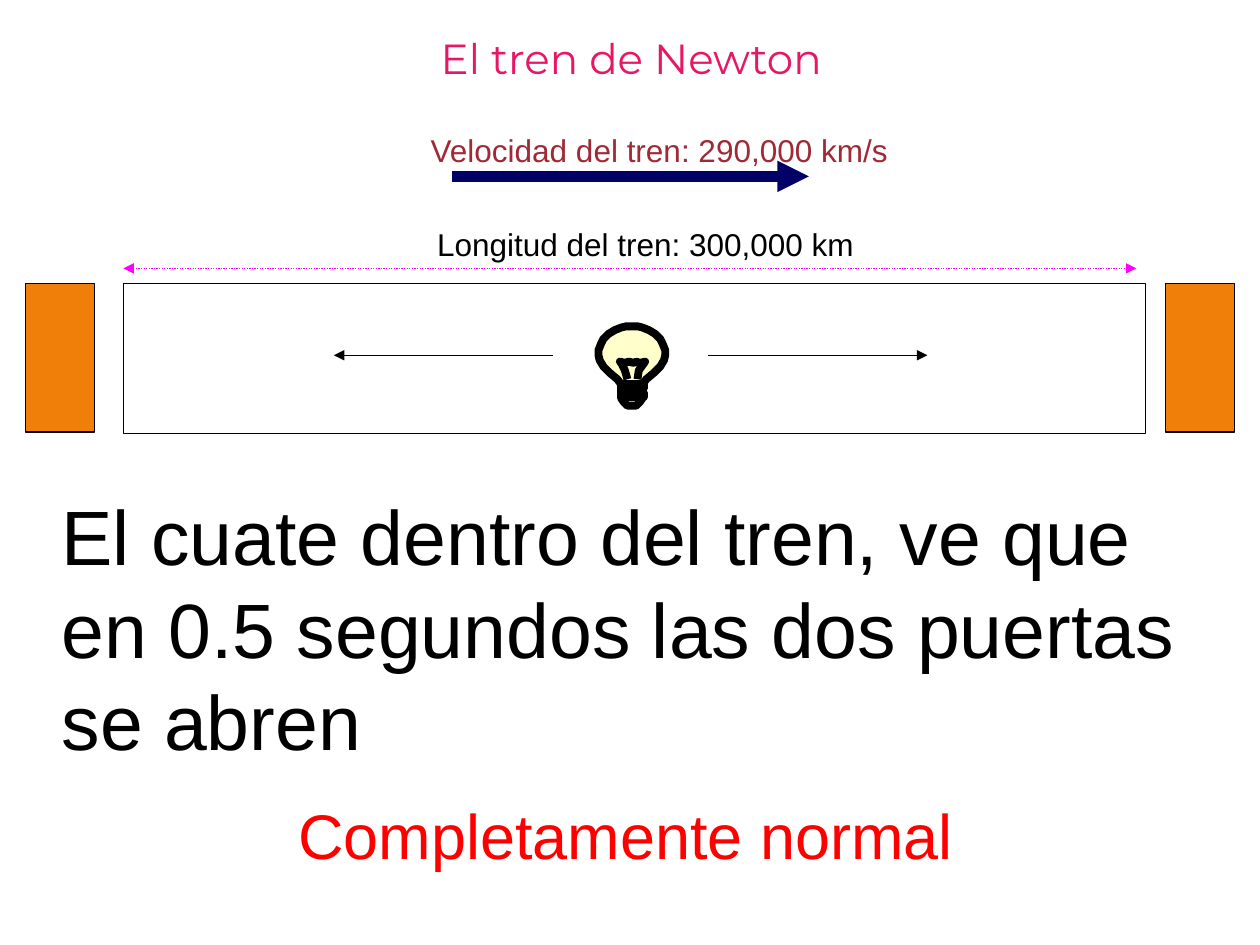
from lxml.etree import SubElement
from pptx import Presentation
from pptx.dml.color import RGBColor
from pptx.enum.dml import MSO_LINE
from pptx.enum.shapes import MSO_CONNECTOR, MSO_SHAPE
from pptx.enum.text import MSO_AUTO_SIZE, PP_ALIGN
from pptx.oxml.ns import qn
from pptx.util import Pt

COLORS = {
    "black": "000000", "navy": "000066", "magenta": "FF00FF",
    "orange": "F07F09", "bulb": "FFFFCC", "title": "E81766",
    "speed": "9F2936", "red": "FF0000",
}


def rgb(name):
    return RGBColor.from_string(COLORS[name])


def style(s, fill, width):
    s.shadow.inherit = False
    if fill:
        s.fill.solid()
        s.fill.fore_color.rgb = rgb(fill)
    else:
        s.fill.background()
    s.line.color.rgb = rgb("black")
    s.line.width = Pt(width)


prs = Presentation()
prs.slide_width, prs.slide_height = Pt(720), Pt(540)
slide = prs.slides.add_slide(prs.slide_layouts[6])
shapes = slide.shapes

# Train and the two doors
for x, y, w, h, fill in [
    (70.56, 162, 583.92, 85.68, None),
    (14.4, 162, 39.6, 84.96, "orange"),
    (666, 162, 39.6, 84.96, "orange"),
]:
    s = shapes.add_shape(MSO_SHAPE.RECTANGLE, Pt(x), Pt(y), Pt(w), Pt(h))
    style(s, fill, 0.75)

# Light bulb, in hundredths of an inch: left half of the glass, then its mirror
UNIT = Pt(0.72)
left = [
    (501, 259), (497, 259), (493, 260), (488, 262), (483, 265), (479, 269),
    (477, 273), (475, 278), (475, 282), (476, 286), (479, 291), (484, 296),
    (490, 301), (493, 305), (493, 316), (495, 319), (498, 322), (501, 322),
]
right = [(1003 - x, y) for x, y in reversed(left)]
fb = shapes.build_freeform(*left[0], scale=UNIT)
fb.add_line_segments(left[1:] + right, close=True)
style(fb.convert_to_shape(), "bulb", 4.5)

# Filament and screw base
filament = [(498, 301), (496, 294), (493, 288), (492, 287), (496, 288),
            (499, 287), (503, 288), (505, 287), (508, 288), (512, 287),
            (507, 294), (506, 301)]
base = [(493, 305), (511, 305), (511, 308), (493, 308),
        (493, 312), (511, 312), (511, 315), (493, 315)]
fb = shapes.build_freeform(*filament[0], scale=UNIT)
fb.add_line_segments(filament[1:], close=False)
fb.move_to(*base[0])
fb.add_line_segments(base[1:], close=False)
style(fb.convert_to_shape(), None, 4.5)

# Arrows: train speed, light to each side, train length
for x1, x2, y, color, width, ends in [
    (258.48, 462.24, 100.8, "navy", 6, ["tailEnd"]),
    (404.64, 529.92, 203.04, "black", 0.75, ["tailEnd"]),
    (316.08, 190.8, 203.04, "black", 0.75, ["tailEnd"]),
    (70.56, 649.44, 153.36, "magenta", 0.75, ["headEnd", "tailEnd"]),
]:
    s = shapes.add_connector(MSO_CONNECTOR.STRAIGHT, Pt(x1), Pt(y), Pt(x2), Pt(y))
    s.line.color.rgb = rgb(color)
    s.line.width = Pt(width)
    if len(ends) == 2:
        s.line.dash_style = MSO_LINE.ROUND_DOT
    for end in ends:
        SubElement(s.line._get_or_add_ln(), qn("a:" + end), type="triangle")
    SubElement(s._element.spPr, qn("a:effectLst"))

# Texts
for text, x, y, w, h, size, color, font, wrap, align in [
    ("El tren de Newton", 33.12, 15.12, 655.2, 41.04, 24, "title",
     "Montserrat", False, PP_ALIGN.CENTER),
    ("Velocidad del tren: 290,000 km/s", 239.04, 71.28, 276.48, 28.8, 18,
     "speed", "Arial", False, PP_ALIGN.LEFT),
    ("Longitud del tren: 300,000 km", 242.64, 125.28, 252.72, 28.8, 18,
     "black", "Arial", False, PP_ALIGN.LEFT),
    ("El cuate dentro del tren, ve que en 0.5 segundos las dos puertas se abren",
     28.08, 275.76, 675.36, 166.32, 44, "black", "Arial", True, PP_ALIGN.LEFT),
    ("Completamente normal", 163.44, 451.44, 392.4, 51.12, 36, "red",
     "Arial", False, PP_ALIGN.LEFT),
]:
    tf = shapes.add_textbox(Pt(x), Pt(y), Pt(w), Pt(h)).text_frame
    tf.word_wrap = wrap
    if font == "Arial":
        tf.auto_size = MSO_AUTO_SIZE.SHAPE_TO_FIT_TEXT
    p = tf.paragraphs[0]
    p.text = text
    p.alignment = align
    p.font.size = Pt(size)
    p.font.name = font
    p.font.color.rgb = rgb(color)

prs.save("out.pptx")
